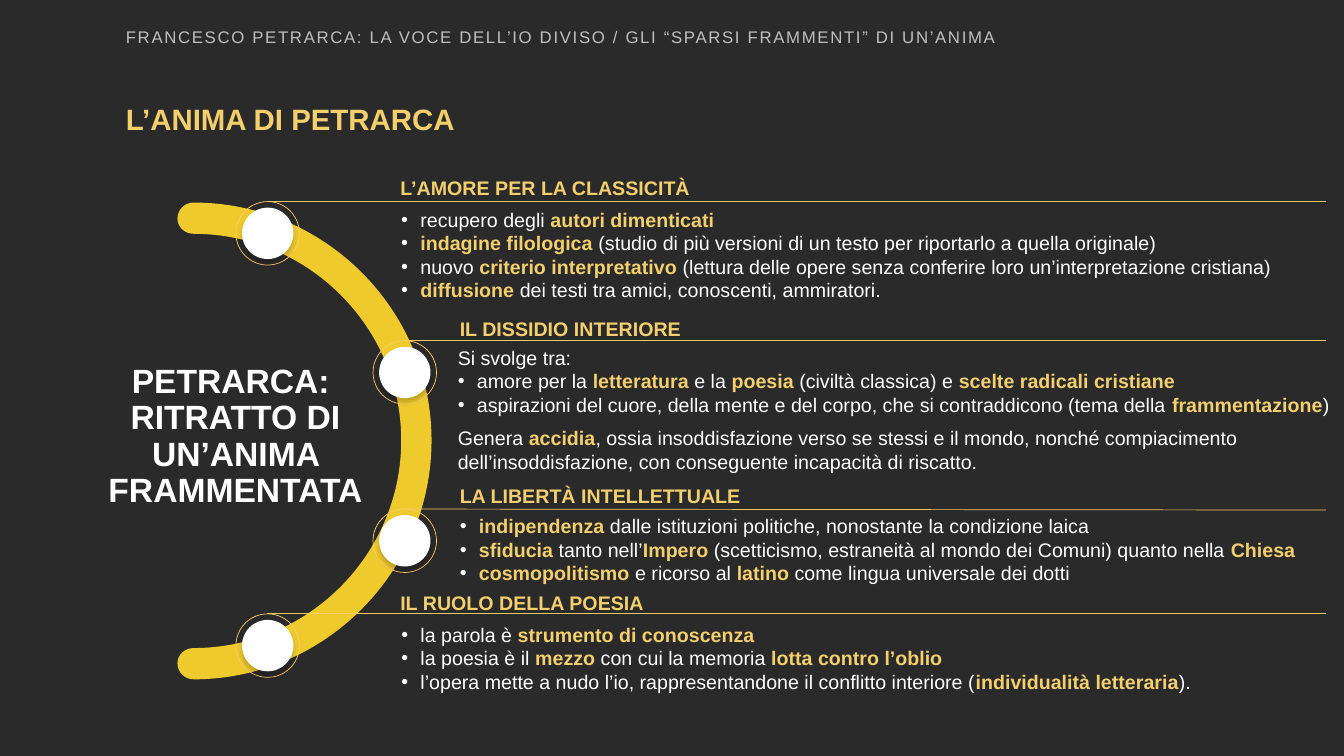
from dataclasses import dataclass

from lxml import etree
from pptx import Presentation
from pptx.dml.color import RGBColor
from pptx.enum.shapes import MSO_CONNECTOR, MSO_SHAPE
from pptx.enum.text import MSO_ANCHOR, PP_ALIGN
from pptx.oxml.ns import qn
from pptx.shapes.autoshape import Shape
from pptx.slide import Slide
from pptx.text.text import _Paragraph
from pptx.util import Emu, Pt

OVAL = MSO_SHAPE.OVAL
STRAIGHT = MSO_CONNECTOR.STRAIGHT
TOP, MIDDLE = MSO_ANCHOR.TOP, MSO_ANCHOR.MIDDLE
LEFT, CENTER = PP_ALIGN.LEFT, PP_ALIGN.CENTER

PX_PER_INCH = 100
FONT = "Arial"
DARK, WHITE, GREY = "2A2A2A", "FFFFFF", "BFBFBF"
GOLD, ARC_YELLOW, RING_YELLOW = "F3CF6D", "EFCA2D", "FFCC66"
RING_SIZE, DISC_INSET, DISC_SIZE = 63, 6, 51
RULE_RIGHT = 1315
BULLET_INDENT = 19
QUARTER_CURVE = 0.55
ARC_CORNERS = ((192, 674), (428, 437), (192, 201), (176, 217),
               (192, 232), (398, 437), (192, 643), (176, 658))


@dataclass(frozen=True)
class Line:
    text: str
    bullet: bool = True
    space_before: int = 0


@dataclass(frozen=True)
class Box:
    left: int
    top: int
    width: int
    height: int


@dataclass(frozen=True)
class Style:
    size: int = 14
    color: str = WHITE
    bold: bool = False
    align: PP_ALIGN = LEFT
    anchor: MSO_ANCHOR = TOP
    margins: tuple[int, int, int, int] = (5, 5, 5, 5)
    line_spacing: float = 1.0
    tracking: int = 0


@dataclass(frozen=True)
class Section:
    heading: str
    heading_box: Box
    ring_left: int
    rule_top: int
    rule_end: int
    body_box: Box
    lines: tuple[Line, ...]


BODY = Style()
HEADING = Style(color=GOLD, bold=True)
BREADCRUMB = Style(size=12, color=GREY, anchor=MIDDLE, margins=(10, 5, 5, 5), tracking=120)
TITLE = Style(size=21, color=GOLD, bold=True, margins=(10, 5, 10, 5), line_spacing=0.9)
PORTRAIT = Style(size=24, bold=True, align=CENTER, anchor=MIDDLE,
                 margins=(0, 0, 0, 0), line_spacing=0.9)

SECTIONS = (
    Section("L’AMORE PER LA CLASSICITÀ", Box(392, 170, 781, 34), 234, 200, 200,
            Box(393, 201, 907, 105), (
        Line("recupero degli **autori dimenticati**"),
        Line("**indagine filologica **(studio di più versioni di un testo per riportarlo a quella originale)"),
        Line("nuovo **criterio interpretativo **(lettura delle opere senza conferire loro un’interpretazione cristiana)"),
        Line("**diffusione** dei testi tra amici, conoscenti, ammiratori."),
    )),
    Section("IL DISSIDIO INTERIORE", Box(451, 309, 781, 34), 370, 338, 338,
            Box(449, 338, 879, 138), (
        Line("Si svolge tra:", bullet=False),
        Line("amore per la **letteratura** e la **poesia** (civiltà classica) e **scelte radicali cristiane**"),
        Line("aspirazioni del cuore, della mente e del corpo, che si contraddicono (tema della **frammentazione**)"),
        Line("Genera **accidia**, ossia insoddisfazione verso se stessi e il mondo, nonché compiacimento "
             "dell’insoddisfazione, con conseguente incapacità di riscatto.", bullet=False, space_before=7),
    )),
    Section("LA LIBERTÀ INTELLETTUALE", Box(451, 475, 781, 34), 370, 505, 506,
            Box(451, 505, 879, 81), (
        Line("**indipendenza** dalle istituzioni politiche, nonostante la condizione laica"),
        Line("**sfiducia** tanto nell’**Impero** (scetticismo, estraneità al mondo dei Comuni) quanto nella **Chiesa**"),
        Line("**cosmopolitismo** e ricorso al **latino **come lingua universale dei dotti"),
    )),
    Section("IL RUOLO DELLA POESIA", Box(392, 581, 781, 34), 234, 609, 609,
            Box(393, 613, 845, 81), (
        Line("la parola è **strumento di conoscenza**"),
        Line("la poesia è il **mezzo **con cui la memoria **lotta contro l’oblio**"),
        Line("l’opera mette a nudo l’io, rappresentandone il conflitto interiore (**individualità letteraria**)."),
    )),
)


def px(value: float) -> Emu:
    return Emu(round(value * 914400 / PX_PER_INCH))


def rgb(color: str) -> RGBColor:
    return RGBColor.from_string(color)


def add_bullet(para: _Paragraph) -> None:
    properties = para._p.get_or_add_pPr()
    properties.set("marL", str(px(BULLET_INDENT)))
    properties.set("indent", str(-px(BULLET_INDENT)))
    bullet_color = etree.SubElement(properties, qn("a:buClr"))
    etree.SubElement(bullet_color, qn("a:srgbClr"), val=WHITE)
    etree.SubElement(properties, qn("a:buFont"), typeface=FONT)
    etree.SubElement(properties, qn("a:buChar"), char="•")


def add_text(page: Slide, box: Box, lines: tuple[Line, ...], style: Style) -> None:
    frame = page.shapes.add_textbox(
        px(box.left), px(box.top), px(box.width), px(box.height)).text_frame
    frame.word_wrap = True
    frame.vertical_anchor = style.anchor
    (frame.margin_left, frame.margin_top,
     frame.margin_right, frame.margin_bottom) = map(px, style.margins)
    for index, line in enumerate(lines):
        para = frame.paragraphs[0] if index == 0 else frame.add_paragraph()
        if line.bullet:
            add_bullet(para)
        para.alignment = style.align
        para.line_spacing = style.line_spacing
        if line.space_before:
            para.space_before = Pt(line.space_before)
        for position, words in enumerate(line.text.split("**")):
            if not words:
                continue
            emphasis = position % 2 == 1
            span = para.add_run()
            span.text = words
            span.font.name = FONT
            span.font.size = Pt(style.size)
            span.font.bold = style.bold or emphasis
            span.font.color.rgb = rgb(GOLD if emphasis else style.color)
            if style.tracking:
                span.font._element.set("spc", str(style.tracking))


def add_circle(page: Slide, left: int, top: int, size: int) -> Shape:
    circle = page.shapes.add_shape(OVAL, px(left), px(top), px(size), px(size))
    circle.shadow.inherit = False
    return circle


def add_node(page: Slide, left: int, top: int) -> None:
    ring = add_circle(page, left, top, RING_SIZE)
    ring.fill.background()
    ring.line.color.rgb = rgb(RING_YELLOW)
    ring.line.width = Pt(0.5)
    disc = add_circle(page, left + DISC_INSET, top + DISC_INSET, DISC_SIZE)
    disc.fill.solid()
    disc.fill.fore_color.rgb = rgb(WHITE)
    disc.line.fill.background()
    effects = disc._element.spPr.find(qn("a:effectLst"))
    shadow = etree.SubElement(effects, qn("a:outerShdw"), blurRad=str(Pt(4)),
                              dist=str(Pt(3)), dir="5400000", rotWithShape="0")
    shadow_color = etree.SubElement(shadow, qn("a:srgbClr"), val="000000")
    etree.SubElement(shadow_color, qn("a:alpha"), val="20000")


def add_rule(page: Slide, left: int, top: int, end: int) -> None:
    rule = page.shapes.add_connector(STRAIGHT, px(left), px(top), px(RULE_RIGHT), px(end))
    rule.line.color.rgb = rgb(RING_YELLOW)
    rule.line.width = Pt(0.5)
    etree.SubElement(rule._element.spPr, qn("a:effectLst"))


def toward(start: tuple[int, int], corner: tuple[int, int]) -> tuple[float, float]:
    return (start[0] + QUARTER_CURVE * (corner[0] - start[0]),
            start[1] + QUARTER_CURVE * (corner[1] - start[1]))


def add_arc(page: Slide) -> None:
    ends = ARC_CORNERS[1:] + ARC_CORNERS[:1]
    builder = page.shapes.build_freeform(*ARC_CORNERS[0], scale=px(1))
    builder.add_line_segments(ends, close=True)
    arc = builder.convert_to_shape()
    arc.shadow.inherit = False
    arc.fill.solid()
    arc.fill.fore_color.rgb = rgb(ARC_YELLOW)
    arc.line.fill.background()
    outline = next(arc._element.iter(qn("a:path")))
    outline.set("w", str(arc.width))
    outline.set("h", str(arc.height))
    start_point = outline.find(qn("a:moveTo")).find(qn("a:pt"))
    start_point.set("x", str(px(ARC_CORNERS[0][0]) - arc.left))
    start_point.set("y", str(px(ARC_CORNERS[0][1]) - arc.top))
    segments = outline.findall(qn("a:lnTo"))
    for index, (segment, start, end) in enumerate(zip(segments, ARC_CORNERS, ends)):
        corner = (end[0], start[1]) if index % 2 == 0 else (start[0], end[1])
        curve = etree.Element(qn("a:cubicBezTo"))
        for x, y in (toward(start, corner), toward(end, corner), end):
            etree.SubElement(curve, qn("a:pt"), x=str(px(x) - arc.left), y=str(px(y) - arc.top))
        outline.replace(segment, curve)


def main() -> None:
    deck = Presentation()
    deck.slide_width, deck.slide_height = px(1333), px(750)
    page = deck.slides.add_slide(deck.slide_layouts[6])
    page.background.fill.solid()
    page.background.fill.fore_color.rgb = rgb(DARK)
    for box, text, style in (
        (Box(115, 22, 1086, 30),
         "FRANCESCO PETRARCA: LA VOCE DELL’IO DIVISO / GLI “SPARSI FRAMMENTI” DI UN’ANIMA", BREADCRUMB),
        (Box(115, 99, 1102, 42), "L’ANIMA DI PETRARCA", TITLE),
        (Box(71, 361, 325, 145), "PETRARCA: \nRITRATTO DI UN’ANIMA FRAMMENTATA", PORTRAIT),
    ):
        add_text(page, box, tuple(Line(row, bullet=False) for row in text.split("\n")), style)
    add_arc(page)
    for section in SECTIONS:
        add_node(page, section.ring_left, section.rule_top)
        add_rule(page, section.ring_left + RING_SIZE // 2, section.rule_top, section.rule_end)
        add_text(page, section.heading_box, (Line(section.heading, bullet=False),), HEADING)
        add_text(page, section.body_box, section.lines, BODY)
    deck.save("out.pptx")


if __name__ == "__main__":
    main()
